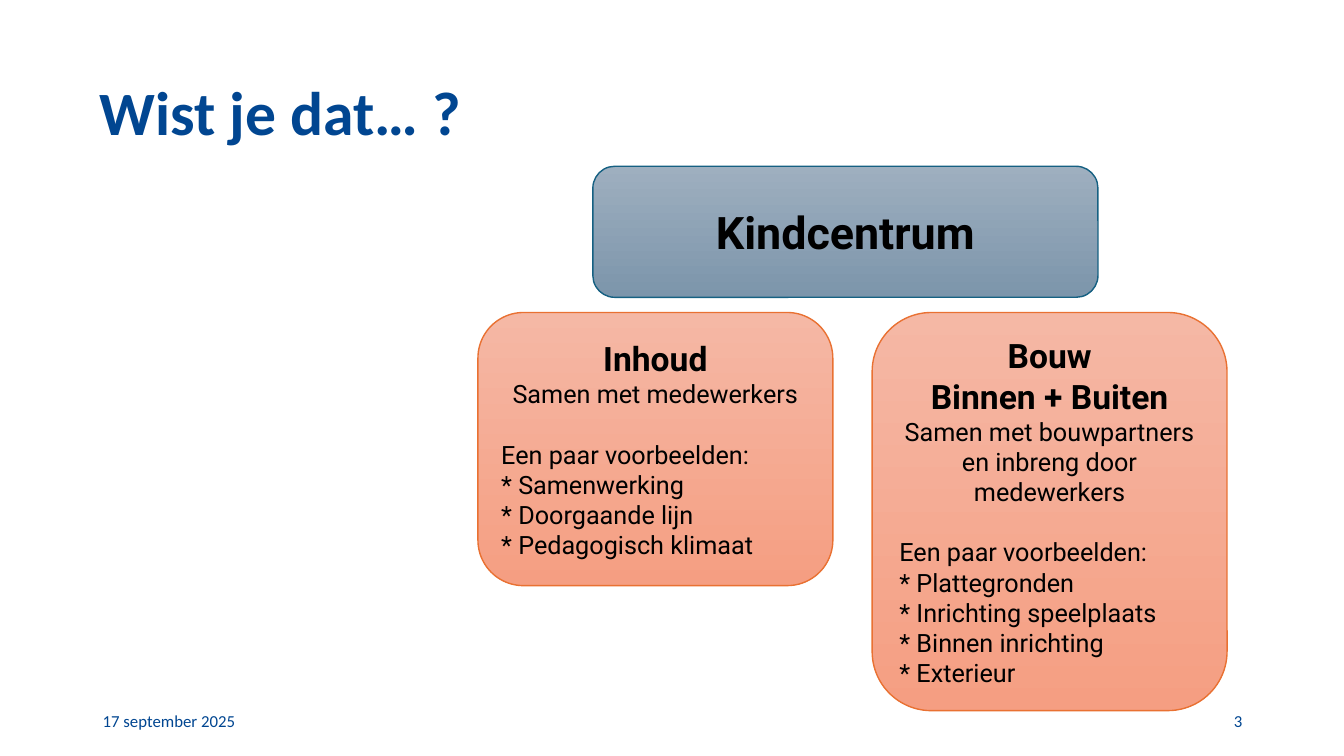
"""Build the slide 'Wist je dat… ?' about the Kindcentrum."""
from pptx import Presentation
from pptx import util as u
from pptx.dml.color import RGBColor
from pptx.enum import shapes, text

LEFT, CENTER, RIGHT = text.PP_ALIGN.LEFT, text.PP_ALIGN.CENTER, text.PP_ALIGN.RIGHT
NAVY, BLACK = "014691", "000000"


def color(value):
    return RGBColor.from_string(value)


def write(box, lines, font_name, font_color):
    frame = box.text_frame
    frame.word_wrap = True
    frame.vertical_anchor = text.MSO_ANCHOR.MIDDLE
    for index, (words, size, bold, align, before) in enumerate(lines):
        para = frame.paragraphs[0] if index == 0 else frame.add_paragraph()
        para.alignment = align
        if before:
            para.space_before = u.Pt(before)
        span = para.add_run()
        span.text = words
        format_values = {"name": font_name, "size": u.Pt(size), "bold": bold}
        for key, value in format_values.items():
            setattr(span.font, key, value)
        span.font.color.rgb = color(font_color)


deck = Presentation()
deck.slide_width, deck.slide_height = u.Inches(13.33), u.Inches(7.5)
page = deck.slides.add_slide(deck.slide_layouts[6])

labels = [
    ((0.92, 6.95, 3, 0.4), ("17 september 2025", 12, False, LEFT, 0)),
    ((9.42, 6.95, 3, 0.4), ("3", 12, False, RIGHT, 0)),
    ((0, 0.68, 5.57, 0.84), ("Wist je dat… ?", 44, True, CENTER, 0)),
]
for place, line in labels:
    box = page.shapes.add_textbox(*map(u.Inches, place))
    write(box, [line], "Calibri", NAVY)

blue = ("9EAFBF", "7C95AB", "156082")
orange = ("F5B8A5", "F59E82", "E97132")
cards = [
    ((5.88, 1.65, 5.01, 1.3), blue, 32, ["Kindcentrum"], "", []),
    ((4.74, 3.1, 3.52, 2.71), orange, 24, ["Inhoud"], "Samen met medewerkers",
     ["Samenwerking", "Doorgaande lijn", "Pedagogisch klimaat"]),
    ((8.65, 3.1, 3.52, 3.95), orange, 24, ["Bouw", "Binnen + Buiten"],
     "Samen met bouwpartners en inbreng door medewerkers",
     ["Plattegronden", "Inrichting speelplaats", "Binnen inrichting", "Exterieur"]),
]
for place, (top, bottom, edge), size, headings, partners, examples in cards:
    card = page.shapes.add_shape(shapes.MSO_SHAPE.ROUNDED_RECTANGLE, *map(u.Inches, place))
    card.shadow.inherit = False
    card.fill.gradient()
    card.fill.gradient_angle = 270
    for stop, shade in zip(card.fill.gradient_stops, (top, bottom)):
        stop.color.rgb = color(shade)
    card.line.color.rgb = color(edge)
    card.line.width = u.Pt(1)
    lines = [(heading, size, True, CENTER, 0) for heading in headings]
    if examples:
        lines.append((partners, 18, False, CENTER, 0))
        lines.append(("Een paar voorbeelden:", 18, False, LEFT, 21.5))
        lines += [("* " + example, 18, False, LEFT, 0) for example in examples]
    write(card, lines, "Roboto", BLACK)

deck.save("out.pptx")
